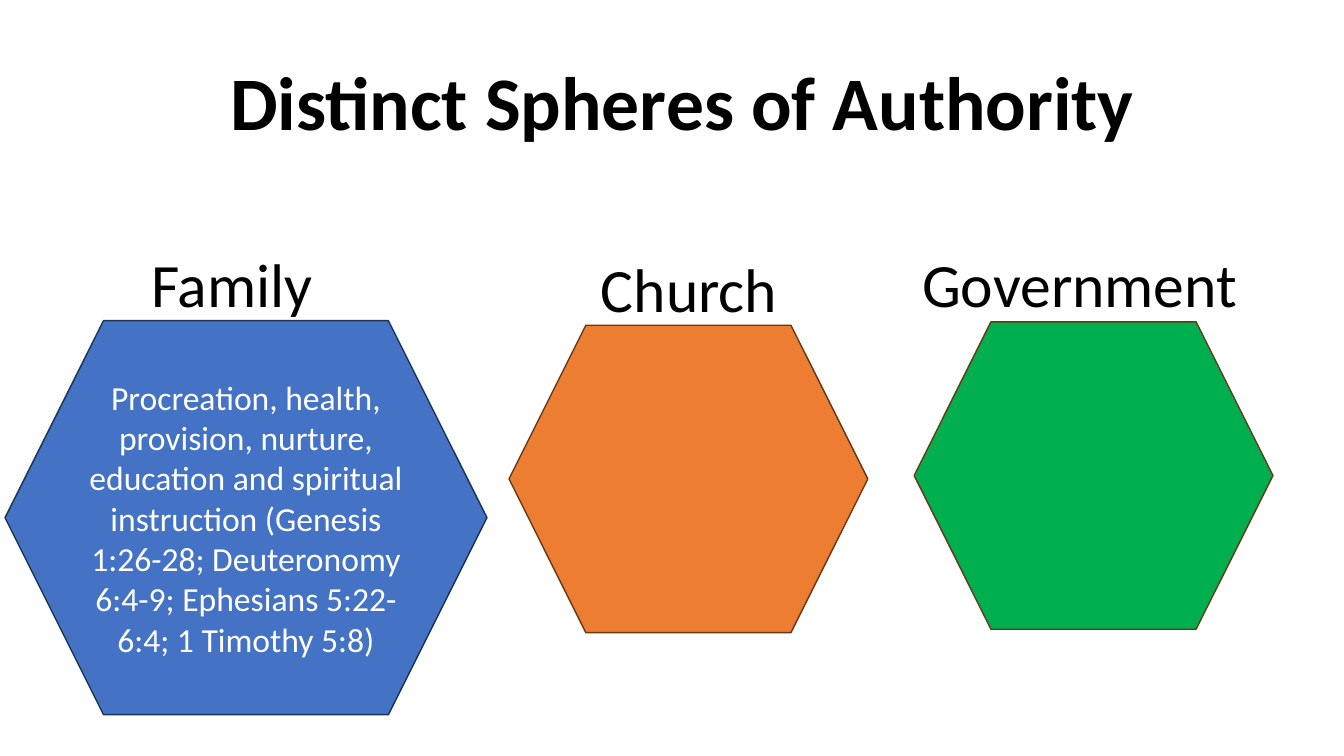
from pptx import Presentation
from pptx.dml.color import RGBColor
from pptx.enum.shapes import MSO_SHAPE
from pptx.enum.text import MSO_ANCHOR, MSO_AUTO_SIZE, PP_ALIGN
from pptx.util import Pt

BLACK = RGBColor(0x00, 0x00, 0x00)
WHITE = RGBColor(0xFF, 0xFF, 0xFF)
BLUE = RGBColor(0x44, 0x72, 0xC4)
NAVY = RGBColor(0x1E, 0x32, 0x56)
ORANGE = RGBColor(0xED, 0x7D, 0x31)
GREEN = RGBColor(0x00, 0xB0, 0x50)
BROWN = RGBColor(0x68, 0x37, 0x15)

DUTIES = ("Procreation, health, provision, nurture, education and spiritual "
          "instruction (Genesis 1:26-28; Deuteronomy 6:4-9; "
          "Ephesians 5:22-6:4; 1 Timothy 5:8)")


class Deck:
    font = "Calibri"
    label = {"size": Pt(44), "bold": False}
    head = {"size": Pt(54), "bold": True}
    body = {"size": Pt(24), "bold": False}

    def __init__(self):
        self.prs = Presentation()
        self.prs.slide_width, self.prs.slide_height = Pt(960), Pt(540)
        self.slide = self.prs.slides.add_slide(self.prs.slide_layouts[5])

    def letter(self, shape, text, style, color=BLACK, align=PP_ALIGN.LEFT,
               anchor=MSO_ANCHOR.MIDDLE, space=None, fit=MSO_AUTO_SIZE.NONE):
        """Put formatted text into a shape."""
        frame = shape.text_frame
        frame.text = text
        form = {"word_wrap": True, "auto_size": fit, "vertical_anchor": anchor}
        for key, value in form.items():
            setattr(frame, key, value)
        para = frame.paragraphs[0]
        para.alignment, para.line_spacing = align, space
        font = para.runs[0].font
        for key, value in {"name": self.font, **style}.items():
            setattr(font, key, value)
        font.color.rgb = color

    def title(self, text, box):
        shape = self.slide.shapes.title
        for key, value in zip(("left", "top", "width", "height"), box):
            setattr(shape, key, Pt(value))
        self.letter(shape, text, self.label, space=0.9)

    def text(self, text, box, style, **form):
        shape = self.slide.shapes.add_textbox(*map(Pt, box))
        self.letter(shape, text, style, **form)

    def hexagon(self, box, fill, line, text=None):
        shape = self.slide.shapes.add_shape(MSO_SHAPE.HEXAGON, *map(Pt, box))
        shape.shadow.inherit = False
        shape.fill.solid()
        shape.fill.fore_color.rgb = fill
        shape.line.color.rgb = line
        shape.line.width = Pt(1)
        if text:
            self.letter(shape, text, self.body, WHITE, PP_ALIGN.CENTER)


def main():
    deck = Deck()
    deck.title("Church", (422, 164, 159, 89.3))
    for name, left, width in (("Family", 100.8, 159), ("Government", 651.6, 251.3)):
        deck.text(name, (left, 160.6, width, 89.3), deck.label, space=0.9)
    deck.hexagon((3.6, 229, 344.2, 281.5), BLUE, NAVY, DUTIES)
    for left, top, fill in ((363.6, 232.3, ORANGE), (653, 229.9, GREEN)):
        deck.hexagon((left, top, 256.3, 219.6), fill, BROWN)
    deck.text("Distinct Spheres of Authority", (100.8, 36, 773.3, 72.7), deck.head,
              align=PP_ALIGN.CENTER, anchor=MSO_ANCHOR.TOP,
              fit=MSO_AUTO_SIZE.SHAPE_TO_FIT_TEXT)
    deck.prs.save("out.pptx")


if __name__ == "__main__":
    main()
